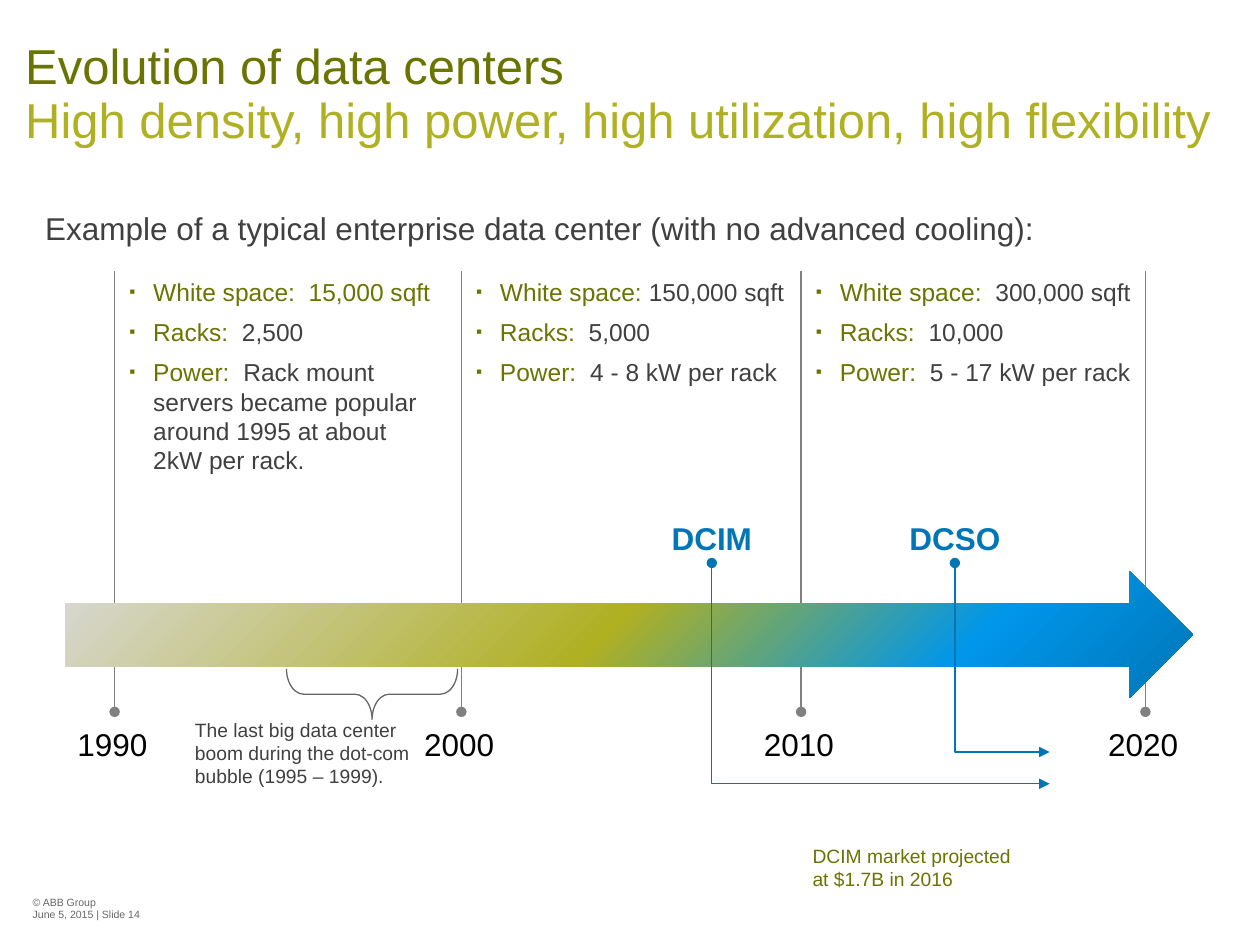
import dataclasses

import lxml.etree
import pptx
import pptx.dml.color
import pptx.enum.shapes
import pptx.enum.text
import pptx.oxml.ns
import pptx.util

Cm = pptx.util.Cm
Pt = pptx.util.Pt
qn = pptx.oxml.ns.qn
Shape = pptx.enum.shapes.MSO_SHAPE
Connector = pptx.enum.shapes.MSO_CONNECTOR
Anchor = pptx.enum.text.MSO_ANCHOR
Align = pptx.enum.text.PP_ALIGN


@dataclasses.dataclass(frozen=True)
class Theme:
    font: str = "Arial"
    olive: str = "6A7400"
    lime: str = "B0B023"
    text: str = "404040"
    muted: str = "666666"
    axis: str = "808080"
    blue: str = "0076B7"
    black: str = "000000"
    title: int = 28
    heading: int = 18
    body: int = 14
    note: int = 11
    footer: int = 6
    line: float = 0.75
    arrow: tuple = ((0, "D9D9D9"), (48, "B0B023"), (78, "0096EA"), (100, "0076B7"))


T = Theme()
INSETS = (0.25, 0.13, 0.25, 0.13)
AXIS_TOP, AXIS_BOTTOM = 5.46, 14.35
DECADES = (("1990", 2.31), ("2000", 9.3), ("2010", 16.15), ("2020", 23.09))
COLUMNS = (
    (6.91, 6.05, T.olive, (
        ("White space:  ", "15,000 sqft"),
        ("Racks:  ", "2,500"),
        ("Power:  ", "Rack mount servers became popular around 1995 at about 2kW per rack."))),
    (6.86, 3.81, T.text, (
        ("White space: ", "150,000 sqft"),
        ("Racks:  ", "5,000"),
        ("Power:  ", "4 - 8 kW per rack"))),
    (7.39, 3.45, T.text, (
        ("White space:  ", "300,000 sqft"),
        ("Racks:  ", "10,000"),
        ("Power:  ", "5 - 17 kW per rack"))),
)
MILESTONES = (("DCIM", 14.35, 2.18, 15.8), ("DCSO", 19.25, 2.39, 15.16))
MILESTONE_TOP, MILESTONE_END = 11.35, 21.16


def rgb(color):
    return pptx.dml.color.RGBColor.from_string(color)


def child(parent, tag, **attrs):
    return lxml.etree.SubElement(parent, qn(tag), attrs)


def style(run, size, color, bold=False):
    run.font.name = T.font
    run.font.size = Pt(size)
    run.font.bold = bold
    run.font.color.rgb = rgb(color)


def add_frame(shapes, box, insets=INSETS, wrap=True, anchor=Anchor.TOP):
    tf = shapes.add_textbox(*map(Cm, box)).text_frame
    tf.word_wrap = wrap
    tf.vertical_anchor = anchor
    tf.margin_left, tf.margin_top, tf.margin_right, tf.margin_bottom = map(Cm, insets)
    return tf


def add_text(shapes, box, text, size, color, bold=False, align=Align.LEFT, spacing=None, **frame):
    tf = add_frame(shapes, box, **frame)
    tf.text = text
    for p in tf.paragraphs:
        p.alignment = align
        p.line_spacing = spacing
        for r in p.runs:
            style(r, size, color, bold)


def add_bullet(p):
    pPr = p._p.get_or_add_pPr()
    pPr.set("marL", str(Cm(0.48)))
    pPr.set("indent", str(Cm(-0.48)))
    child(child(pPr, "a:buClr"), "a:srgbClr", val=T.olive)
    child(pPr, "a:buSzPct", val="70000")
    child(pPr, "a:buFont", typeface=T.font)
    child(pPr, "a:buChar", char="▪")


def add_facts(shapes, box, facts, first_color):
    tf = add_frame(shapes, box, insets=(0.3, 0.13, 0.3, 0.25))
    for i, (label, value) in enumerate(facts):
        p = tf.add_paragraph() if i else tf.paragraphs[0]
        add_bullet(p)
        p.space_after = Pt(6)
        for text, color in ((label, T.olive), (value, T.text if i else first_color)):
            r = p.add_run()
            r.text = text
            style(r, T.body, color)


def add_line(shapes, kind, start, end, color, tail=None):
    c = shapes.add_connector(kind, *map(Cm, start + end))
    c.line.color.rgb = rgb(color)
    c.line.width = Pt(T.line)
    ln = c.line._get_or_add_ln()
    child(ln, "a:headEnd", type="oval")
    if tail:
        child(ln, "a:tailEnd", type=tail)
    child(c._element.spPr, "a:effectLst")
    return c


def add_corner_arrow(shapes, x, bottom):
    c = add_line(shapes, Connector.ELBOW, (x, MILESTONE_TOP), (MILESTONE_END, bottom),
                 T.blue, "triangle")
    run, drop = MILESTONE_END - x, bottom - MILESTONE_TOP
    c.left = Cm(x + (run - drop) / 2)
    c.top = Cm(MILESTONE_TOP + (drop - run) / 2)
    c.width, c.height = Cm(drop), Cm(run)
    spPr = c._element.spPr
    spPr.find(qn("a:prstGeom")).set("prst", "bentConnector2")
    xfrm = spPr.find(qn("a:xfrm"))
    xfrm.set("rot", str(270 * 60000))
    xfrm.set("flipH", "1")


def add_milestone(s, label, x, width, bottom):
    shapes = s.shapes.add_group_shape().shapes
    add_corner_arrow(shapes, x, bottom)
    add_text(shapes, (x - width / 2, 10.34, width, 1.02), label, T.heading, T.blue,
             bold=True, align=Align.CENTER, anchor=Anchor.MIDDLE)


def add_time_arrow(s):
    sp = s.shapes.add_shape(Shape.RIGHT_ARROW, *map(Cm, (1.32, 11.53, 22.73, 2.54)))
    sp.shadow.inherit = False
    sp.line.fill.background()
    sp.fill.gradient()
    grad = sp._element.spPr.find(qn("a:gradFill"))
    for element in list(grad):
        grad.remove(element)
    stops = child(grad, "a:gsLst")
    for position, color in T.arrow:
        child(child(stops, "a:gs", pos=str(position * 1000)), "a:srgbClr", val=color)
    child(grad, "a:lin", ang=str(45 * 60000), scaled="0")


def add_brace(s):
    sp = s.shapes.add_shape(Shape.RIGHT_BRACE, *map(Cm, (6.99, 12.27, 1.02, 3.45)))
    sp.rotation = 90
    sp.adjustments[0] = 0.34
    sp.adjustments[1] = 0.5
    sp.shadow.inherit = False
    sp.fill.background()
    sp.line.color.rgb = rgb(T.muted)
    sp.line.width = Pt(T.line)


def main():
    prs = pptx.Presentation()
    prs.slide_width, prs.slide_height = Cm(25.4), Cm(19.05)
    s = prs.slides.add_slide(prs.slide_layouts[6])
    shapes = s.shapes

    add_text(shapes, (0, 0, 25.4, 3.23), "Evolution of data centers", T.title, T.olive,
             spacing=0.9, insets=(0.51, 0.86, 0.61, 0))
    add_text(shapes, (0, 1.93, 25.4, 1.3),
             "High density, high power, high utilization, high flexibility",
             T.title, T.lime, spacing=0.9, insets=(0.51, 0, 0.61, 0))
    add_text(shapes, (0.66, 4.09, 23.65, 1.02),
             "Example of a typical enterprise data center (with no advanced cooling):",
             T.heading, T.text)

    for year, x in DECADES:
        add_line(shapes, Connector.STRAIGHT, (x, AXIS_BOTTOM), (x, AXIS_TOP), T.axis)
        add_text(shapes, (x - 1, 14.48, 1.93, 1.02), year, T.heading, T.black,
                 wrap=False, anchor=Anchor.MIDDLE)
    add_time_arrow(s)
    for (_, x), (width, height, first_color, facts) in zip(DECADES, COLUMNS):
        add_facts(shapes, (x, AXIS_TOP, width, height), facts, first_color)

    add_brace(s)
    add_text(shapes, (3.68, 14.35, 4.83, 1.68),
             "The last big data center boom during the dot-com bubble (1995 – 1999).",
             T.note, T.text)
    for milestone in MILESTONES:
        add_milestone(s, *milestone)
    add_text(shapes, (16.13, 16.89, 4.57, 1.19),
             "DCIM market projected\nat $1.7B in 2016", T.note, T.olive)
    add_text(shapes, (0.15, 17.83, 7.8, 1.2), "© ABB Group\nJune 5, 2015 | Slide 14",
             T.footer, T.muted, spacing=0.9, insets=(0.51, 0.27, 0.61, 0))
    prs.save("out.pptx")


if __name__ == "__main__":
    main()
